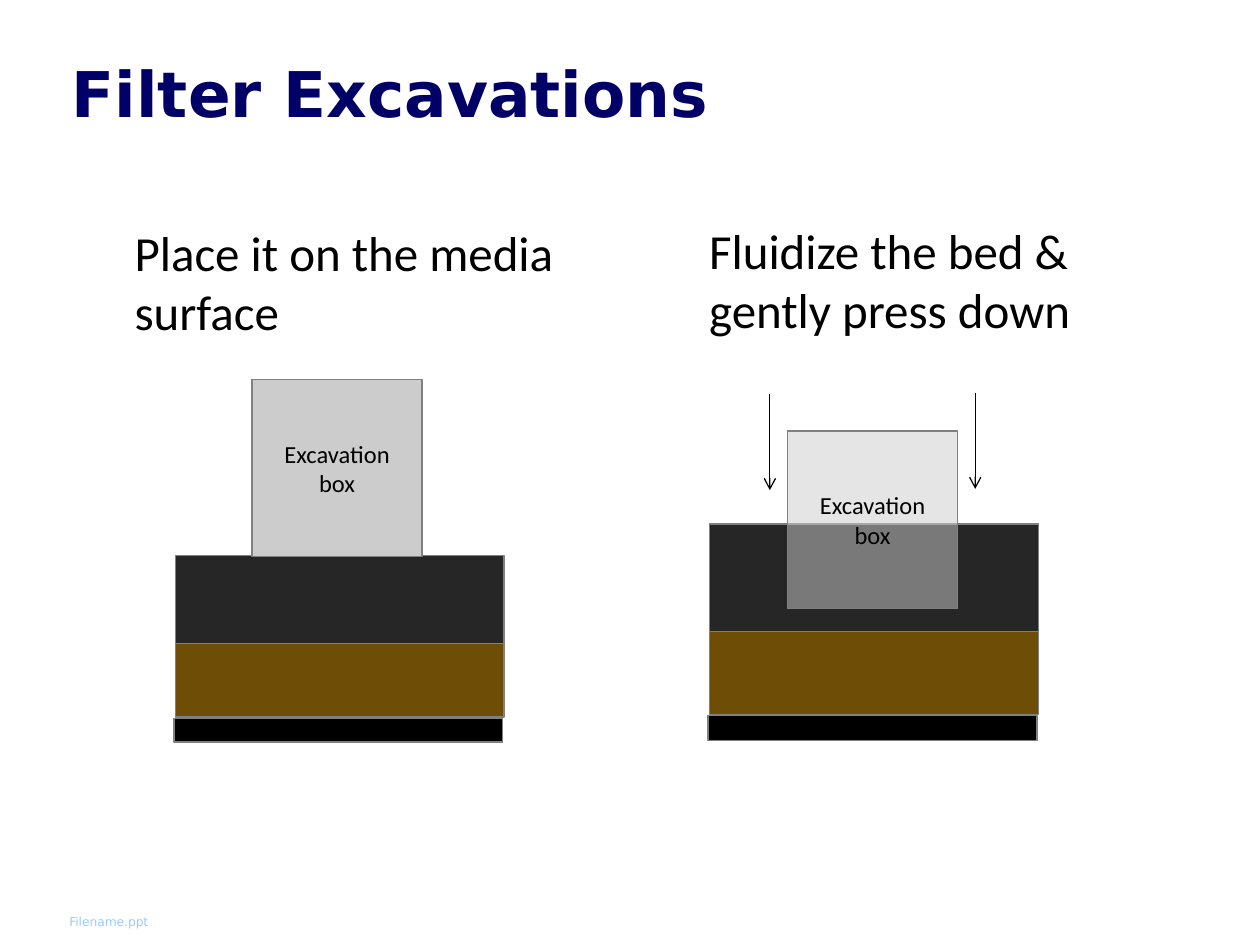
"""Build the Filter Excavations slide: an excavation box before and after pressing down."""
from lxml import etree
from pptx import Presentation, util as u
from pptx.dml.color import RGBColor
from pptx.enum import shapes, text
from pptx.oxml.ns import qn

NAVY = RGBColor(0x00, 0x00, 0x66)
SKY = RGBColor(0x99, 0xCC, 0xFF)
BLACK = RGBColor(0x00, 0x00, 0x00)
GRAY = RGBColor(0x80, 0x80, 0x80)
SILVER = RGBColor(0xCC, 0xCC, 0xCC)
SAND = RGBColor(0x6E, 0x4E, 0x06)
COAL = RGBColor(0x26, 0x26, 0x26)

BED_WIDTH, BASE_SHIFT = 2.61, -0.01
BOX_SIZE = (1.35, 1.41)
BOX_LABEL = "Excavation box"
ARROW_LENGTH = 0.76

STEPS = [
    {"caption": ["Place it on the media", "surface"],
     "caption_at": (0.97, 1.72, 3.87, 1.04), "wrap": False, "bed_left": 1.39,
     "sand": (5.09, 0.6), "coal": (4.41, 0.7), "base": (5.7, 0.19),
     "box_at": (2, 3.01), "opacity": 100, "arrows": []},
    {"caption": ["Fluidize the bed &", "gently press down"],
     "caption_at": (5.53, 1.7, 5, 1.04), "wrap": True, "bed_left": 5.63,
     "sand": (4.98, 0.69), "coal": (4.16, 0.85), "base": (5.68, 0.2),
     "box_at": (6.25, 3.42), "opacity": 50, "arrows": [(6.11, 3.13), (7.74, 3.12)]},
]


def inches(*lengths):
    return [u.Inches(length) for length in lengths]


def write(frame, lines, *, size, color=BLACK, font="Calibri", bold=False, wrap=True,
          align=text.PP_ALIGN.LEFT, anchor=text.MSO_ANCHOR.TOP, insets=(0.1, 0.05, 0.1, 0.05)):
    frame.word_wrap = wrap
    frame.vertical_anchor = anchor
    (frame.margin_left, frame.margin_top,
     frame.margin_right, frame.margin_bottom) = inches(*insets)
    for index, line in enumerate(lines):
        paragraph = frame.add_paragraph() if index else frame.paragraphs[0]
        paragraph.alignment = align
        run = paragraph.add_run()
        run.text = line
        run.font.size, run.font.name, run.font.bold = u.Pt(size), font, bold
        run.font.color.rgb = color


def add_block(parent, at, color, opacity=100):
    block = parent.add_shape(shapes.MSO_SHAPE.RECTANGLE, *inches(*at))
    block.shadow.inherit = False
    block.fill.solid()
    block.fill.fore_color.rgb = color
    block.line.color.rgb = GRAY
    block.line.width = u.Pt(0.75)
    if opacity < 100:
        tint = block.fill._xPr.find(qn("a:solidFill"))[0]
        etree.SubElement(tint, qn("a:alpha"), val=str(opacity * 1000))
    return block


def add_arrow(parent, left, top):
    arrow = parent.add_connector(shapes.MSO_CONNECTOR.STRAIGHT,
                                 *inches(left, top, left, top + ARROW_LENGTH))
    arrow.line.color.rgb = BLACK
    arrow.line.width = u.Pt(0.75)
    properties = arrow._element.spPr
    etree.SubElement(properties.find(qn("a:ln")), qn("a:tailEnd"), type="arrow")
    etree.SubElement(properties, qn("a:effectLst"))


def add_step(parent, step):
    bed = parent.add_group_shape().shapes
    for layer, color, shift in (("sand", SAND, 0), ("coal", COAL, 0),
                                ("base", BLACK, BASE_SHIFT)):
        top, height = step[layer]
        add_block(bed, (step["bed_left"] + shift, top, BED_WIDTH, height), color)
    box = add_block(parent, step["box_at"] + BOX_SIZE, SILVER, step["opacity"])
    write(box.text_frame, [BOX_LABEL], size=14, align=text.PP_ALIGN.CENTER,
          anchor=text.MSO_ANCHOR.MIDDLE)
    caption = parent.add_textbox(*inches(*step["caption_at"]))
    write(caption.text_frame, step["caption"], size=28, wrap=step["wrap"])
    for left, top in step["arrows"]:
        add_arrow(parent, left, top)


def main():
    deck = Presentation()
    deck.slide_width, deck.slide_height = inches(10, 7.5)
    parts = deck.slides.add_slide(deck.slide_layouts[6]).shapes
    footer = parts.add_textbox(*inches(0.5, 7.2, 2.67, 0.22))
    write(footer.text_frame, ["Filename.ppt"], size=7, color=SKY, font="DejaVu Sans",
          anchor=text.MSO_ANCHOR.BOTTOM, insets=(0.05,) * 4)
    title = parts.add_textbox(*inches(0.5, 0.33, 9, 0.83))
    write(title.text_frame, ["Filter Excavations"], size=36, color=NAVY,
          font="DejaVu Sans", bold=True, insets=(0.07, 0.1, 0.07, 0.05))
    for step in STEPS:
        add_step(parts, step)
    deck.save("out.pptx")


if __name__ == "__main__":
    main()
